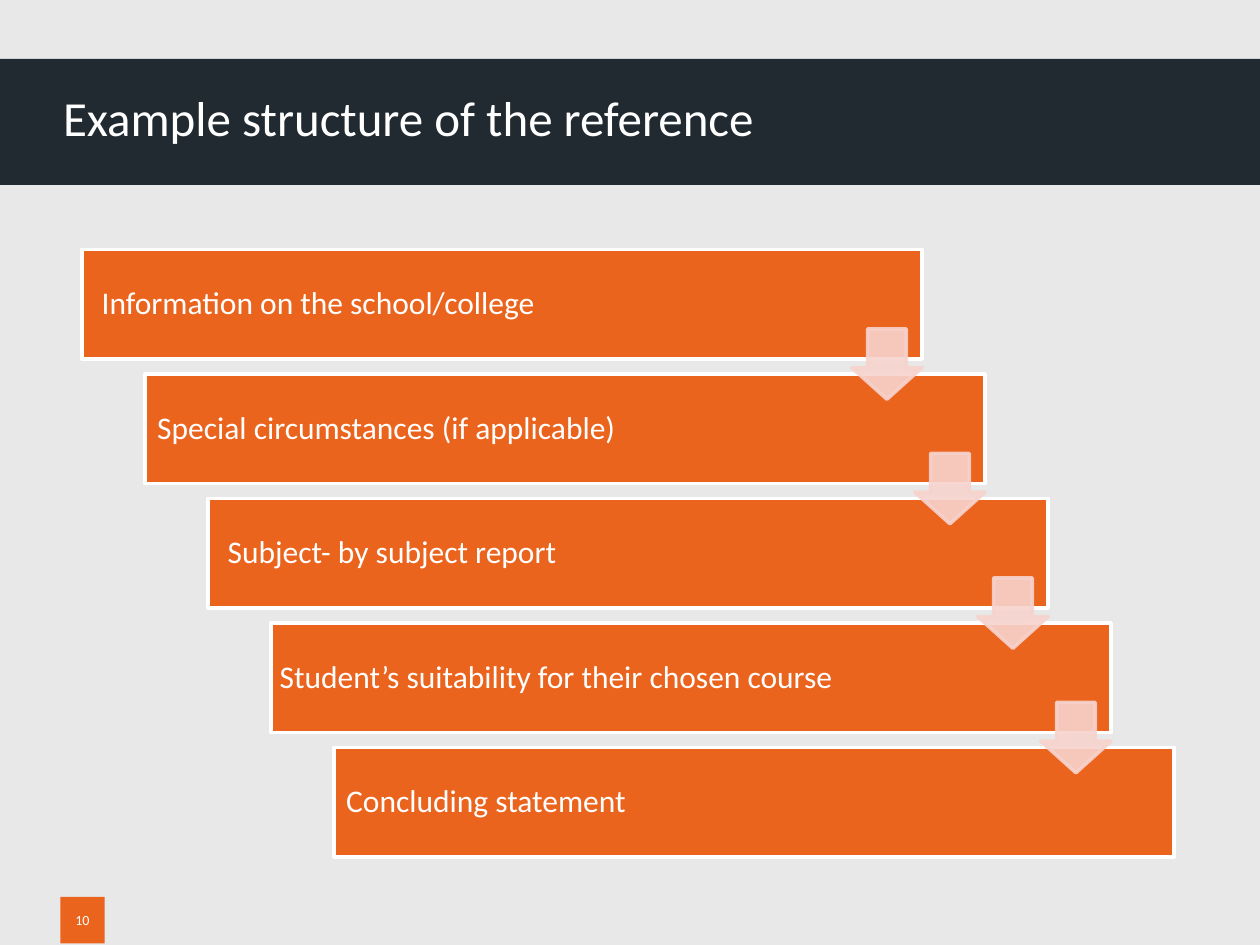
from pptx import Presentation
from pptx import util as u
from pptx.dml.color import RGBColor
from pptx.enum import shapes, text
from pptx.oxml import ns
from lxml import etree

TITLE = "Example structure of the reference"
PAGE_NUMBER = "10"
STEPS = [
    ("Information on the school/college", 0.4),
    ("Special circumstances (if applicable)", 0.25),
    ("Subject- by subject report", 0.4),
    ("Student’s suitability for their chosen course", 0.18),
    ("Concluding statement", 0.25),
]

FONT = "Calibri"
PALE_GREY = RGBColor(0xE8, 0xE8, 0xE9)
NAVY = RGBColor(0x20, 0x2A, 0x30)
ORANGE = RGBColor(0xEB, 0x64, 0x1E)
PINK = RGBColor(0xF7, 0xD3, 0xCD)
WHITE = RGBColor(0xFF, 0xFF, 0xFF)

BAR_LEFT, BAR_TOP = 1.65, 5.03
BAR_WIDTH, BAR_HEIGHT = 16.94, 2.21
STEP_RIGHT, STEP_DOWN = 1.27, 2.51
ARROW_SIZE, ARROW_DROP = 1.42, 1.6


def add_box(page, kind, left, top, width, height, fill, line=None):
    box = page.shapes.add_shape(kind, *map(u.Cm, (left, top, width, height)))
    box.shadow.inherit = False
    box.fill.solid()
    box.fill.fore_color.rgb = fill
    if line is None:
        box.line.fill.background()
    else:
        box.line.color.rgb = line
        box.line.width = u.Pt(2)
    return box


def write(box, words, size, align, inset=0):
    frame = box.text_frame
    frame.text = words
    frame.word_wrap = True
    frame.auto_size = text.MSO_AUTO_SIZE.NONE
    frame.vertical_anchor = text.MSO_ANCHOR.MIDDLE
    frame.margin_left = u.Cm(inset)
    frame.margin_right = frame.margin_top = frame.margin_bottom = 0
    para = frame.paragraphs[0]
    para.alignment = align
    span = para.runs[0]
    span.font.name = FONT
    span.font.size = u.Pt(size)
    span.font.color.rgb = WHITE
    return para


def set_opacity(box, percent):
    for color in box._element.spPr.iter(ns.qn("a:srgbClr")):
        etree.SubElement(color, ns.qn("a:alpha"), val=str(percent * 1000))


def main():
    deck = Presentation()
    deck.slide_width, deck.slide_height = u.Cm(25.4), u.Cm(19.05)
    page = deck.slides.add_slide(deck.slide_layouts[5])
    page.background.fill.solid()
    page.background.fill.fore_color.rgb = PALE_GREY

    rectangle = shapes.MSO_SHAPE.RECTANGLE
    left_align = text.PP_ALIGN.LEFT

    band = add_box(page, rectangle, 0, 1.19, 25.4, 2.54, NAVY)
    page.shapes._spTree.insert(2, band._element)

    title = page.shapes.title
    title.left, title.top = u.Cm(1.27), u.Cm(1.07)
    title.width, title.height = u.Cm(18.19), u.Cm(2.57)
    write(title, TITLE, 28, left_align)

    corners = [
        (BAR_LEFT + i * STEP_RIGHT, BAR_TOP + i * STEP_DOWN)
        for i in range(len(STEPS))
    ]
    for (left, top), (words, inset) in zip(corners, STEPS):
        bar = add_box(page, rectangle, left, top, BAR_WIDTH, BAR_HEIGHT, ORANGE, WHITE)
        para = write(bar, words, 18, left_align, inset)
        para.line_spacing = 0.9

    for left, top in corners[:-1]:
        arrow = add_box(
            page, shapes.MSO_SHAPE.DOWN_ARROW,
            left + BAR_WIDTH - ARROW_SIZE, top + ARROW_DROP,
            ARROW_SIZE, ARROW_SIZE, PINK, PINK,
        )
        arrow.adjustments[0] = 0.55
        arrow.adjustments[1] = 0.45
        set_opacity(arrow, 90)

    number = add_box(page, rectangle, 1.22, 18.08, 0.89, 0.94, ORANGE)
    write(number, PAGE_NUMBER, 8, text.PP_ALIGN.CENTER)

    deck.save("out.pptx")


if __name__ == "__main__":
    main()
